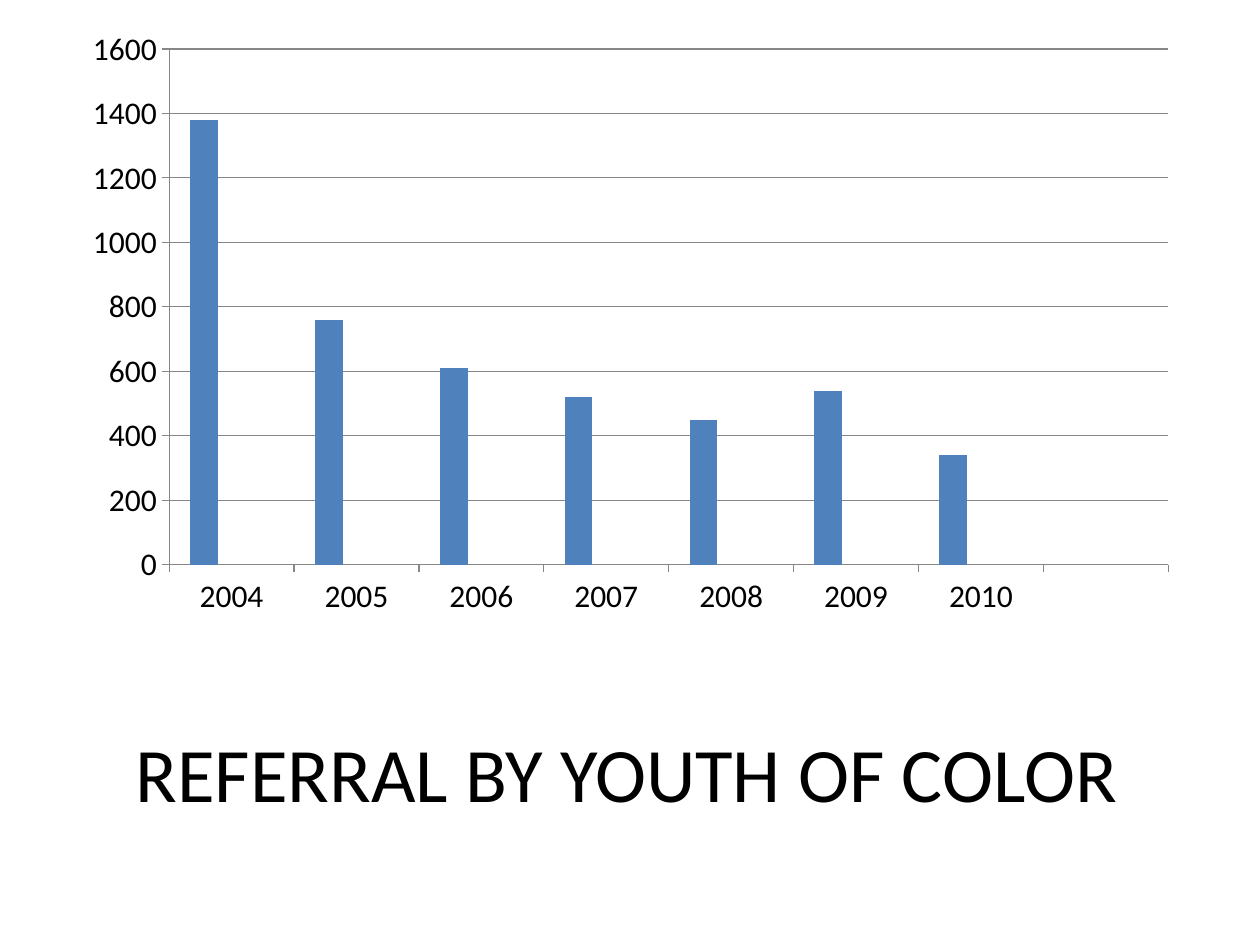
from pptx import Presentation
from pptx.chart.data import CategoryChartData
from pptx.dml.color import RGBColor
from pptx.enum.chart import XL_CHART_TYPE, XL_TICK_MARK
from pptx.enum.text import MSO_ANCHOR, PP_ALIGN
from pptx.util import Pt

theme = {
    "font": "Calibri",
    "text": RGBColor.from_string("000000"),
    "line": RGBColor.from_string("878787"),
    "bars": ["4F81BD", "C0504D", "9BBB59"],
    "title": Pt(44),
    "label": Pt(18),
}

deck = Presentation()
deck.slide_width, deck.slide_height = Pt(720), Pt(540)
slide = deck.slides.add_slide(deck.slide_layouts[5])

# Title below the chart
title = slide.shapes.title
title.left, title.top = Pt(61.2), Pt(383.8)
title.width, title.height = Pt(594), Pt(113.8)
frame = title.text_frame
frame.text = "REFERRAL BY YOUTH OF COLOR"
frame.word_wrap = True
frame.vertical_anchor = MSO_ANCHOR.MIDDLE
line = frame.paragraphs[0]
line.alignment = PP_ALIGN.CENTER
font = line.runs[0].font
font.name, font.size = theme["font"], theme["title"]
font.color.rgb = theme["text"]

# Chart data: the last year and two series are empty
years = [str(year) for year in range(2004, 2011)] + [""]
counts = [1380, 760, 610, 520, 450, 540, 340, None]
blank = [None] * len(years)
data = CategoryChartData()
data.categories = years
for num, vals in enumerate([counts, blank, blank], 1):
    data.add_series(f"Series {num}", vals)

# Column chart
chart = slide.shapes.add_chart(
    XL_CHART_TYPE.COLUMN_CLUSTERED,
    Pt(40.3), Pt(10.1), Pt(640.1), Pt(348.5), data,
).chart
chart.has_legend = False
chart.has_title = False
chart.font.name, chart.font.size = theme["font"], theme["label"]
chart.font.color.rgb = theme["text"]
plot = chart.plots[0]
plot.gap_width, plot.overlap = 150, 0
plot.vary_by_categories = False
for series, color in zip(plot.series, theme["bars"]):
    series.format.fill.solid()
    series.format.fill.fore_color.rgb = RGBColor.from_string(color)

# Axes and grid
count_axis = chart.value_axis
count_axis.minimum_scale, count_axis.maximum_scale = 0, 1600
count_axis.major_unit = 200
count_axis.has_major_gridlines = True
for axis in (chart.category_axis, count_axis):
    axis.major_tick_mark = XL_TICK_MARK.OUTSIDE
    axis.minor_tick_mark = XL_TICK_MARK.NONE
for part in (chart.category_axis, count_axis, count_axis.major_gridlines):
    part.format.line.color.rgb = theme["line"]
    part.format.line.width = Pt(0.75)

deck.save("out.pptx")
